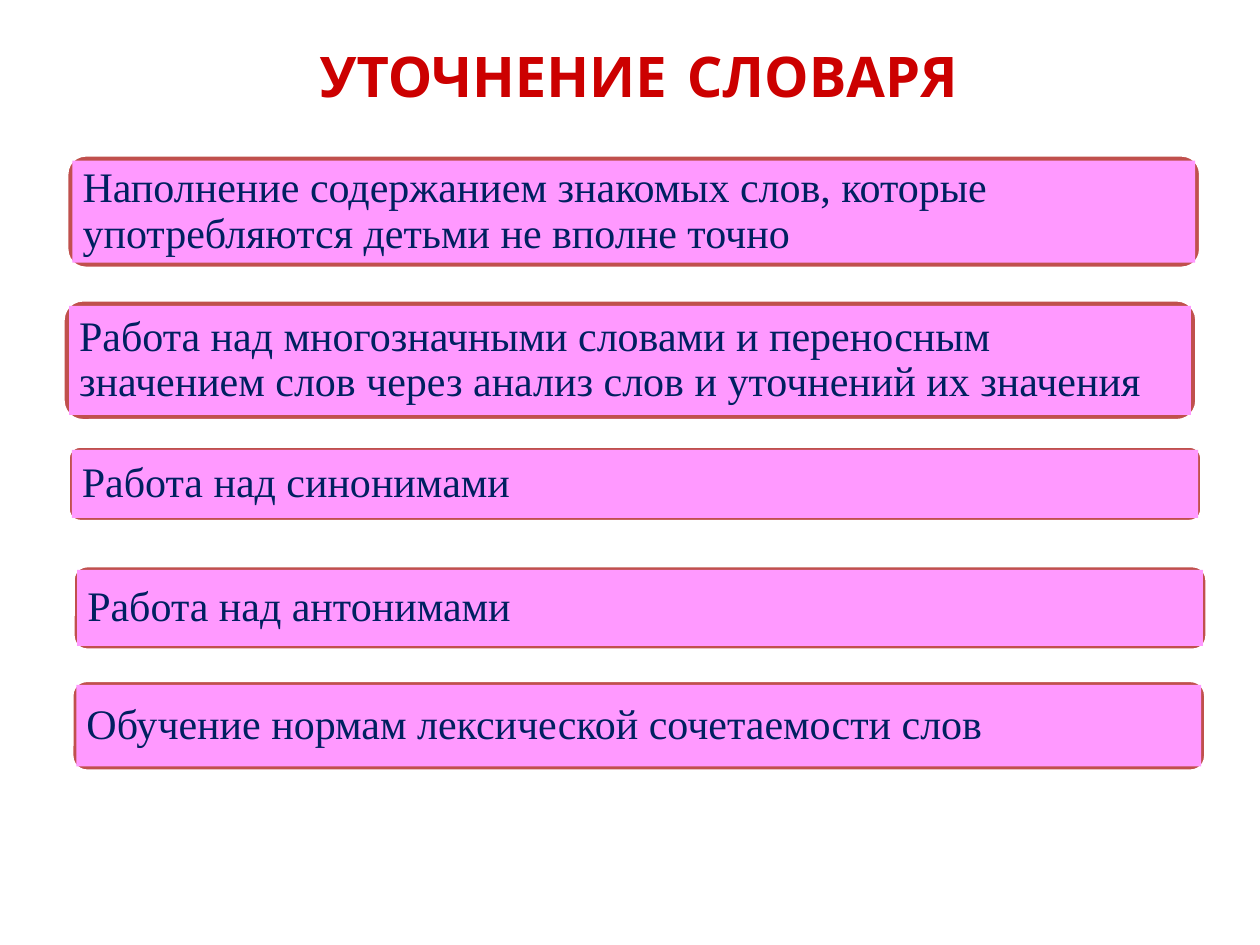
from pptx import Presentation
from pptx.dml.color import RGBColor
from pptx.enum.shapes import MSO_SHAPE as SHAPE
from pptx.enum.text import MSO_ANCHOR as ANCHOR, PP_ALIGN as ALIGN
from pptx.util import Inches, Pt


def color(value):
    return RGBColor.from_string(value)


def set_text(shape, text, size, font, fill, bold=False, align=ALIGN.LEFT,
             line_spacing=None, space_after=None):
    frame = shape.text_frame
    frame.word_wrap = True
    frame.vertical_anchor = ANCHOR.MIDDLE
    paragraph = frame.paragraphs[0]
    paragraph.alignment = align
    paragraph.line_spacing = line_spacing
    paragraph.space_after = space_after
    run = paragraph.add_run()
    run.text = text
    run.font.size = Pt(size)
    run.font.name = font
    run.font.bold = bold
    run.font.color.rgb = color(fill)


presentation = Presentation()
presentation.slide_width = Inches(10)
presentation.slide_height = Inches(7.5)
slide = presentation.slides.add_slide(presentation.slide_layouts[5])

# Title
title = slide.shapes.title
title.left, title.top = Inches(0.61), Inches(0.13)
title.width, title.height = Inches(8.92), Inches(0.93)
set_text(title, "УТОЧНЕНИЕ СЛОВАРЯ", 32, "Comic Neue", "CC0000",
         bold=True, align=ALIGN.CENTER)

# Cards: left, top, height, text
WIDTH = 9
cards = [
    (0.53, 1.23, 0.90, "Наполнение содержанием знакомых слов, которые "
                       "употребляются детьми не вполне точно"),
    (0.50, 2.38, 0.96, "Работа над многозначными словами и переносным "
                       "значением слов через анализ слов и уточнений их значения"),
    (0.54, 3.54, 0.60, "Работа над синонимами"),
    (0.58, 4.49, 0.67, "Работа над антонимами"),
    (0.57, 5.40, 0.72, "Обучение нормам лексической сочетаемости слов"),
]
for left, top, height, text in cards:
    group = slide.shapes.add_group_shape()

    # Rounded frame
    frame = group.shapes.add_shape(SHAPE.ROUNDED_RECTANGLE, Inches(left),
                                   Inches(top), Inches(WIDTH), Inches(height))
    frame.shadow.inherit = False
    frame.fill.solid()
    frame.fill.fore_color.rgb = color("C0504D")
    frame.line.color.rgb = color("FFFFFF")
    frame.line.width = Pt(2)

    # Text panel, inset in proportion to the card's height
    inset = height * 0.05
    panel = group.shapes.add_shape(
        SHAPE.RECTANGLE, Inches(left + inset), Inches(top + inset),
        Inches(WIDTH - 2 * inset), Inches(height - 2 * inset))
    panel.shadow.inherit = False
    panel.fill.solid()
    panel.fill.fore_color.rgb = color("FF99FF")
    panel.line.fill.background()
    margins = panel.text_frame
    margins.margin_left = margins.margin_right = Inches(0.08)
    margins.margin_top = margins.margin_bottom = Inches(0.08)
    set_text(panel, text, 24, "Times New Roman", "002060",
             line_spacing=0.9, space_after=Pt(8.4))

presentation.save("out.pptx")
